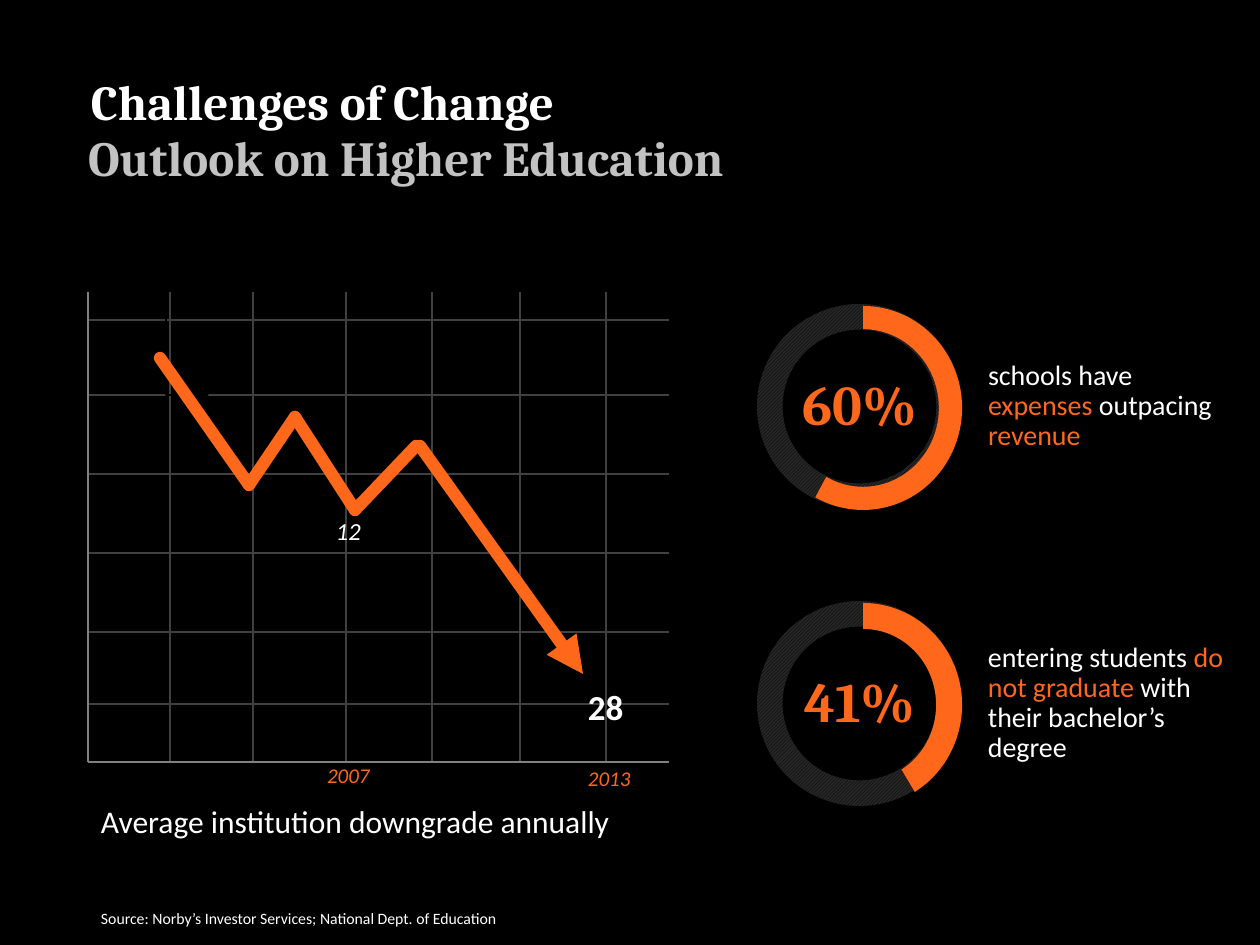
import pptx
import pptx.util
import pptx.dml.color
import pptx.enum.dml
import pptx.enum.shapes
import pptx.enum.text
import pptx.oxml
import pptx.oxml.ns

SCALE = 914400 / 126
COLORS = {"black": "000000", "white": "FFFFFF", "orange": "FF671B", "silver": "C2C2C2",
          "grid": "404040", "axis": "808080", "ring": "262626"}
SHAPES = pptx.enum.shapes.MSO_SHAPE
LINES = pptx.enum.shapes.MSO_CONNECTOR
ANCHOR = pptx.enum.text.MSO_ANCHOR
ALIGN = pptx.enum.text.PP_ALIGN

TITLE = "Challenges of Change"
SUBTITLE = "Outlook on Higher Education"
LABELS = [
    ("12", (323, 510, 64, 43), dict(size=14, italic=True)),
    ("Average institution downgrade annually", (88, 796, 542, 50), dict(size=18)),
    ("28", (575, 679, 64, 55), dict(size=20, bold=True)),
    ("2013", (575, 760, 82, 38), dict(size=12, italic=True, color="orange")),
    ("2007", (314, 757, 82, 38), dict(size=12, italic=True, color="orange")),
    ("Source: Norby’s Investor Services; National Dept. of Education",
     (88, 903, 432, 32), dict(size=9)),
]
GRID_X = [170, 253, 346, 432, 520, 606]
GRID_Y = [320, 395, 474, 553, 632, 704]
LEFT, RIGHT, TOP, BOTTOM = 88, 669, 292, 762
TREND = [(160, 358), (249, 485), (295, 417), (355, 510), (416, 446)]
ARROW = [(420, 446), (583, 674)]
RINGS = [
    dict(top=304, value="60%", end=16.86, band=0.117, width=282, arc_top=309,
         text=[("schools have ", "white"), ("expenses", "orange"),
               (" outpacing ", "white"), ("revenue", "orange")]),
    dict(top=601, value="41%", end=197.54, band=0.131, width=291, arc_top=606,
         text=[("entering students ", "white"), ("do not graduate", "orange"),
               (" with their bachelor’s degree", "white")]),
]


def px(n):
    return pptx.util.Emu(round(n * SCALE))


def rgb(name):
    return pptx.dml.color.RGBColor.from_string(COLORS[name])


def write(sp, text, size=16, color="white", font="Calibri", bold=False, italic=False,
          align=ALIGN.LEFT, anchor=ANCHOR.TOP, margins=(13, 6, 13, 6), spacing=None, wrap=True):
    tf = sp.text_frame
    tf.word_wrap = wrap
    tf.auto_size = pptx.enum.text.MSO_AUTO_SIZE.NONE
    tf.vertical_anchor = anchor
    tf.margin_left, tf.margin_top, tf.margin_right, tf.margin_bottom = map(px, margins)
    p = tf.paragraphs[0]
    p.alignment = align
    p.line_spacing = spacing
    for words, tint in [(text, color)] if isinstance(text, str) else text:
        r = p.add_run()
        r.text = words
        r.font.name, r.font.size = font, pptx.util.Pt(size)
        r.font.bold, r.font.italic = bold, italic
        r.font.color.rgb = rgb(tint)


def add_text(slide, text, box, **style):
    write(slide.shapes.add_textbox(*map(px, box)), text, **style)


def add_line(slide, start, end, color, width=1, arrow=False, kind=LINES.STRAIGHT):
    c = slide.shapes.add_connector(kind, *map(px, (*start, *end)))
    c.line.color.rgb = rgb(color)
    c.line.width = pptx.util.Pt(width)
    ln = c.line._get_or_add_ln()
    if width > 1:
        ln.set("cap", "rnd")
    if arrow:
        tail = pptx.oxml.parse_xml(f'<a:tailEnd {pptx.oxml.ns.nsdecls("a")} type="triangle"/>')
        ln.append(tail)
    effects = pptx.oxml.parse_xml(f'<a:effectLst {pptx.oxml.ns.nsdecls("a")}/>')
    c._element.spPr.append(effects)


def add_shape(slide, kind, box):
    sp = slide.shapes.add_shape(kind, *map(px, box))
    sp.shadow.inherit = False
    sp.line.fill.background()
    return sp


def add_ring(slide, ring):
    top = ring["top"]
    sp = add_shape(slide, SHAPES.DONUT, (757, top, 205, 205))
    sp.adjustments[0] = 0.125
    sp.fill.patterned()
    sp.fill.pattern = pptx.enum.dml.MSO_PATTERN.DARK_UPWARD_DIAGONAL
    sp.fill.fore_color.rgb = rgb("black")
    sp.fill.back_color.rgb = rgb("ring")

    sp = add_shape(slide, SHAPES.OVAL, (782, top + 21, 156, 156))
    sp.fill.background()
    write(sp, ring["value"], size=32, color="orange", font="Cambria", bold=True,
          align=ALIGN.CENTER, anchor=ANCHOR.MIDDLE, margins=(13, 13, 13, 13), wrap=False)
    add_text(slide, ring["text"], (969, top + 34, ring["width"], 131), anchor=ANCHOR.MIDDLE,
             margins=(19, 25, 19, 19), spacing=0.9)

    sp = add_shape(slide, SHAPES.BLOCK_ARC, (761, ring["arc_top"], 204, 198))
    sp.rotation = 90
    for i, value in enumerate((108, ring["end"], ring["band"])):
        sp.adjustments[i] = value
    sp.fill.solid()
    sp.fill.fore_color.rgb = rgb("orange")


def main():
    prs = pptx.Presentation()
    prs.slide_width, prs.slide_height = px(1260), px(945)
    slide = prs.slides.add_slide(prs.slide_layouts[5])
    slide.background.fill.solid()
    slide.background.fill.fore_color.rgb = rgb("black")

    heading = dict(size=28, font="Cambria", bold=True, spacing=0.85)
    title = slide.shapes.title
    title.left, title.top, title.width, title.height = map(px, (91, 81, 1091, 50))
    write(title, TITLE, anchor=ANCHOR.BOTTOM, margins=(0, 0, 0, 0), **heading)
    add_text(slide, SUBTITLE, (88, 131, 1091, 50), color="silver", margins=(0, 6, 0, 0), **heading)

    for x in GRID_X:
        add_line(slide, (x, BOTTOM), (x, TOP), "grid")
    for y in GRID_Y:
        add_line(slide, (LEFT, y), (RIGHT, y), "grid")
    add_line(slide, (123, 309), (209, 395), "black", arrow=True, kind=LINES.ELBOW)
    add_line(slide, (LEFT, TOP), (LEFT, BOTTOM), "axis")
    add_line(slide, (LEFT, BOTTOM), (RIGHT, BOTTOM), "axis")

    for start, end in zip(TREND, TREND[1:]):
        add_line(slide, start, end, "orange", width=7)
    add_line(slide, *ARROW, "orange", width=7, arrow=True)

    for text, box, style in LABELS:
        add_text(slide, text, box, **style)
    for ring in RINGS:
        add_ring(slide, ring)
    prs.save("out.pptx")


if __name__ == "__main__":
    main()
